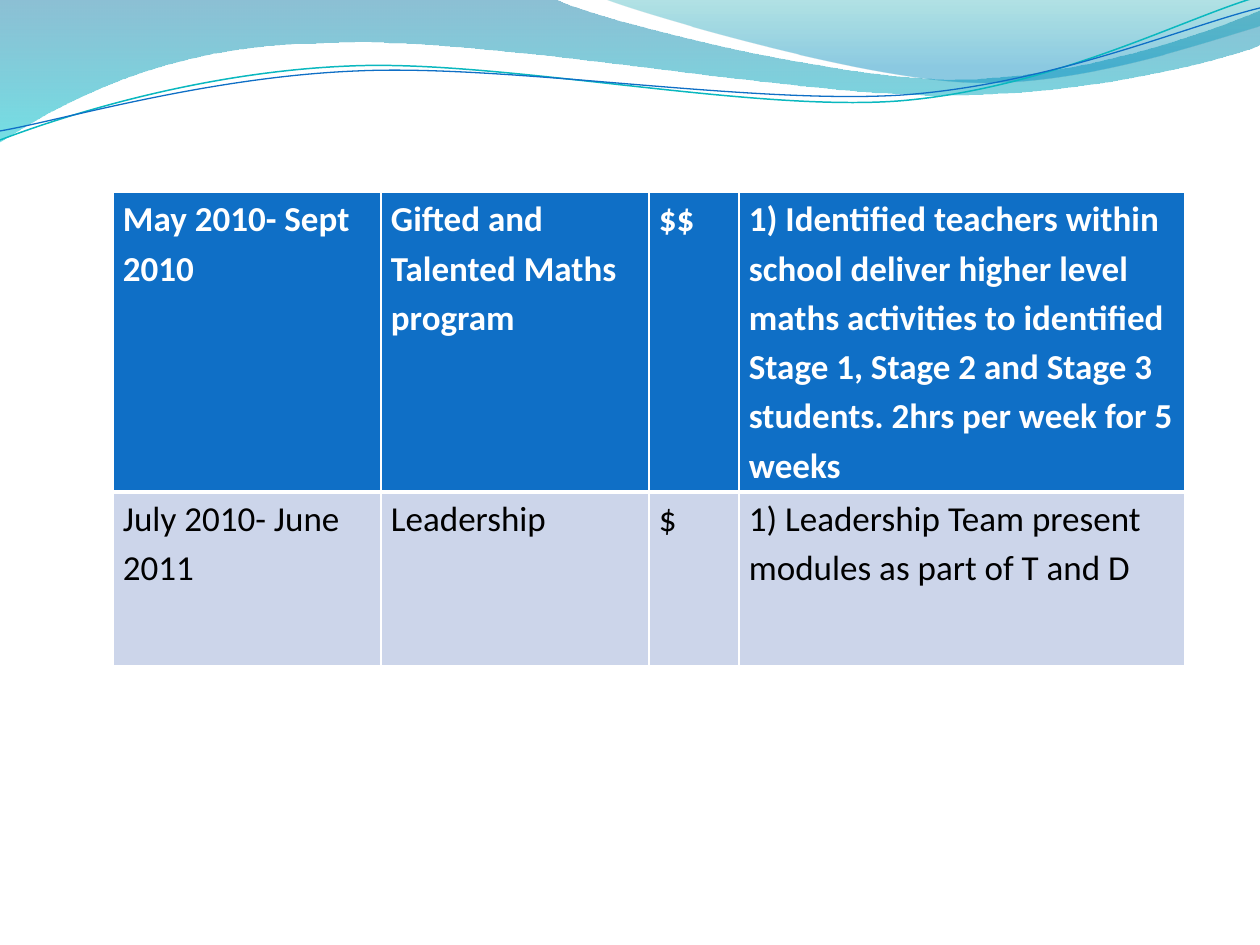
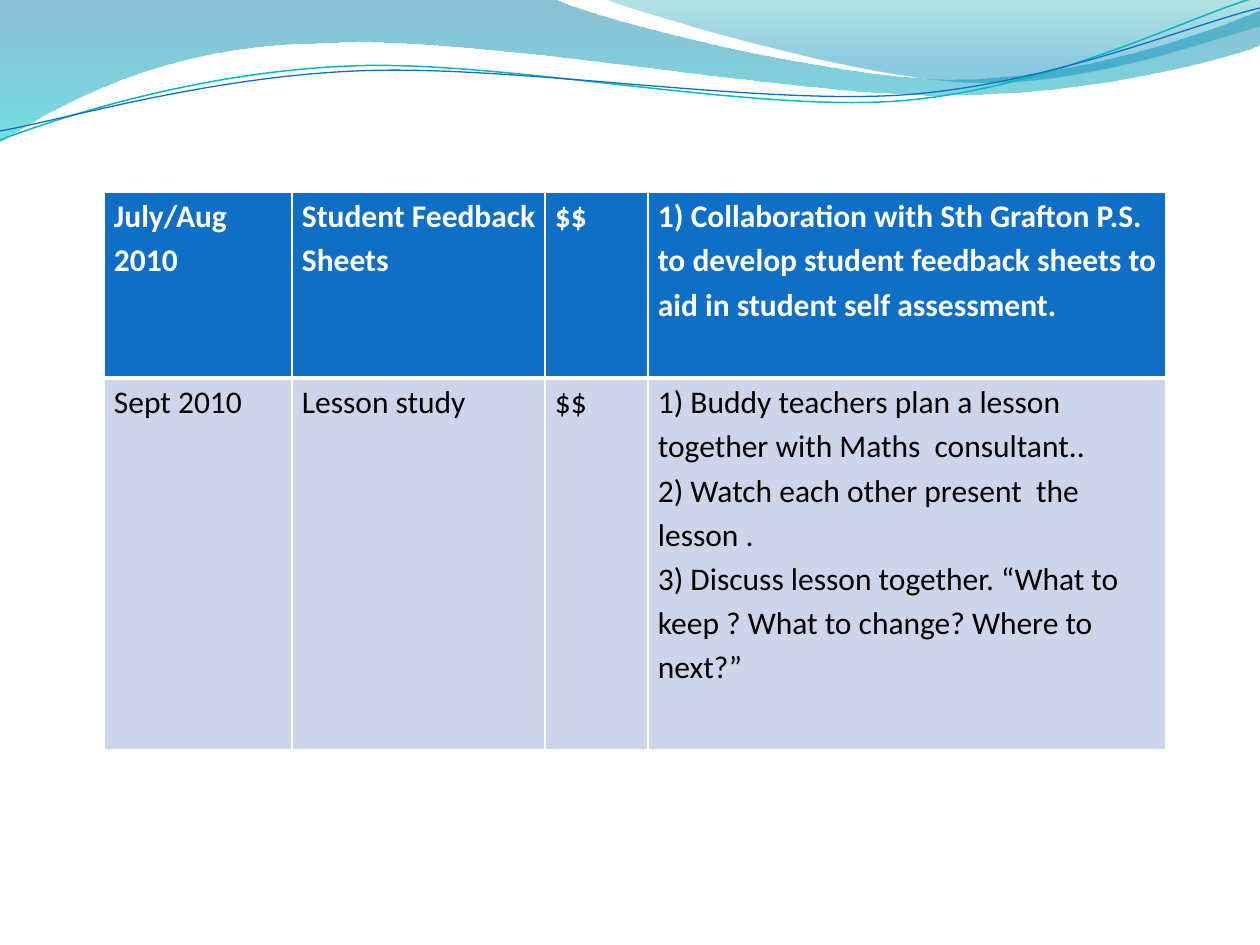
from lxml import etree
from pptx import Presentation
from pptx.dml import color
from pptx.oxml import ns
from pptx.util import Pt

UNIT = 914400 / 126
WIDE, HIGH = 1260, 945
BLUE, TEAL, PALE, WHITE, BLACK = "0F6FC6", "0AB8BF", "CCD5EA", "FFFFFF", "000000"

BAND = [(0, -1), (554, -1), (600, 21, 837, 79, 955, 79),
        (1075, 79, 1207, 33, 1260, 11), (1261, 45),
        (1239, 55, 1096, 96, 940, 95), (784, 95, 481, 35, 324, 43),
        (163, 44, 58, 105, -1, 142), (0, -1)]
CREST = [(604, -1), (641, 14, 859, 78, 969, 82),
         (1079, 87, 1211, 40, 1260, 26), (1260, 0), (604, -1)]
FILLS = [(BAND, [(0, "0074A1", 45), (1, "00C6CF", 55)]),
         (CREST, [(0, "00A1A9", 30), (0.8, "008BBF", 45)])]
LINES = [([(0, 140), (60, 117, 199, 72, 349, 66),
           (498, 59, 747, 112, 898, 101), (1050, 89, 1182, 19, 1257, -3)], TEAL, 0.85),
         ([(0, 131), (59, 121, 207, 77, 357, 71),
           (508, 64, 752, 105, 903, 95), (1053, 84, 1186, 26, 1260, 8)], BLUE, 0.75)]

PLANS = [
    dict(box=(113, 192), cols=[268, 268, 90, 446], rows=[300, 174], size=20, cells=[
        ["May 2010- Sept 2010", "Gifted and Talented Maths program", "$$",
         "1) Identified teachers within school deliver higher level maths activities to "
         "identified Stage 1, Stage 2 and Stage 3 students. 2hrs per week for 5 weeks"],
        ["July 2010- June 2011", "Leadership", "$",
         "1) Leadership Team present modules as part of T and D"]]),
    dict(box=(104, 192), cols=[188, 253, 103, 518], rows=[186, 372], size=18, cells=[
        ["July/Aug 2010", "Student Feedback Sheets", "$$",
         "1) Collaboration with Sth Grafton P.S. to develop student feedback sheets "
         "to aid in student self assessment."],
        ["Sept 2010", "Lesson study", "$$",
         "1) Buddy teachers plan a lesson together with Maths  consultant..\n"
         "2) Watch each other present  the lesson .\n"
         "3) Discuss lesson together. “What to keep ? What to change? Where to next?”"]]),
]


def px(num):
    return round(num * UNIT)


def rgb(code):
    return color.RGBColor.from_string(code)


def apply(item, values):
    for key, value in values.items():
        setattr(item, key, value)


def bend(shape, box, steps):
    nodes = list(shape.element.spPr.iter(ns.qn("a:lnTo")))
    for node, step in zip(nodes, steps[1:]):
        if len(step) == 2:
            continue
        node.clear()
        curve = etree.Element(ns.qn("a:cubicBezTo"))
        node.getparent().replace(node, curve)
        for x, y in zip(step[::2], step[1::2]):
            etree.SubElement(curve, ns.qn("a:pt"), x=str(px(box[0] + x) - shape.left),
                             y=str(px(box[1] + y) - shape.top))


def outline(slide, box, steps, close):
    spots = [(px(box[0] + step[-2]), px(box[1] + step[-1])) for step in steps]
    pen = slide.shapes.build_freeform(*spots[0], scale=1.0)
    pen.add_line_segments(spots[1:], close=close)
    shape = pen.convert_to_shape()
    shape.shadow.inherit = False
    bend(shape, box, steps)
    return shape


def header(slide, box):
    for steps, stops in FILLS:
        shape = outline(slide, box, steps, True)
        shape.line.fill.background()
        shape.fill.gradient()
        shape.fill.gradient_angle = 270
        for stop, (place, tint, _) in zip(shape.fill.gradient_stops, stops):
            stop.position = place
            stop.color.rgb = rgb(tint)
        tints = shape.element.spPr.iter(ns.qn("a:srgbClr"))
        for node, (_, _, alpha) in zip(list(tints), stops):
            etree.SubElement(node, ns.qn("a:alpha"), val=str(alpha * 1000))
    for steps, tint, width in LINES:
        shape = outline(slide, box, steps, False)
        shape.fill.background()
        shape.line.color.rgb = rgb(tint)
        shape.line.width = Pt(width)


def border(cell, sides):
    props = cell._tc.get_or_add_tcPr()
    for side, width in sides.items():
        line = etree.SubElement(props, ns.qn("a:ln" + side), w=str(Pt(width)))
        fill = etree.SubElement(line, ns.qn("a:solidFill"))
        etree.SubElement(fill, ns.qn("a:srgbClr"), val=WHITE)


def write(cell, words, size, head):
    border(cell, dict(L=1, R=1, T=1 if head else 3, B=3 if head else 1))
    cell.fill.solid()
    cell.fill.fore_color.rgb = rgb(BLUE if head else PALE)
    apply(cell, dict(margin_left=px(10), margin_right=px(9),
                     margin_top=0, margin_bottom=0))
    cell.text_frame.text = words
    for para in cell.text_frame.paragraphs:
        para.line_spacing = 1.15
        for run in para.runs:
            apply(run.font, dict(name="Calibri", size=Pt(size), bold=head))
            run.font.color.rgb = rgb(WHITE if head else BLACK)


def grid(slide, box, cols, rows, size, cells):
    frame = slide.shapes.add_table(len(rows), len(cols), px(box[0]), px(box[1]),
                                   px(sum(cols)), px(sum(rows)))
    table = frame.table
    table.horz_banding = False
    for col, width in zip(table.columns, cols):
        col.width = px(width)
    for index, (row, height) in enumerate(zip(table.rows, rows)):
        row.height = px(height)
        for cell, words in zip(row.cells, cells[index]):
            write(cell, words, size, index == 0)


def main():
    deck = Presentation()
    apply(deck, dict(slide_width=px(WIDE), slide_height=px(HIGH)))
    for plan in PLANS:
        slide = deck.slides.add_slide(deck.slide_layouts[6])
        header(slide, (0, 0))
        grid(slide, **plan)
    deck.save("out.pptx")


if __name__ == "__main__":
    main()
